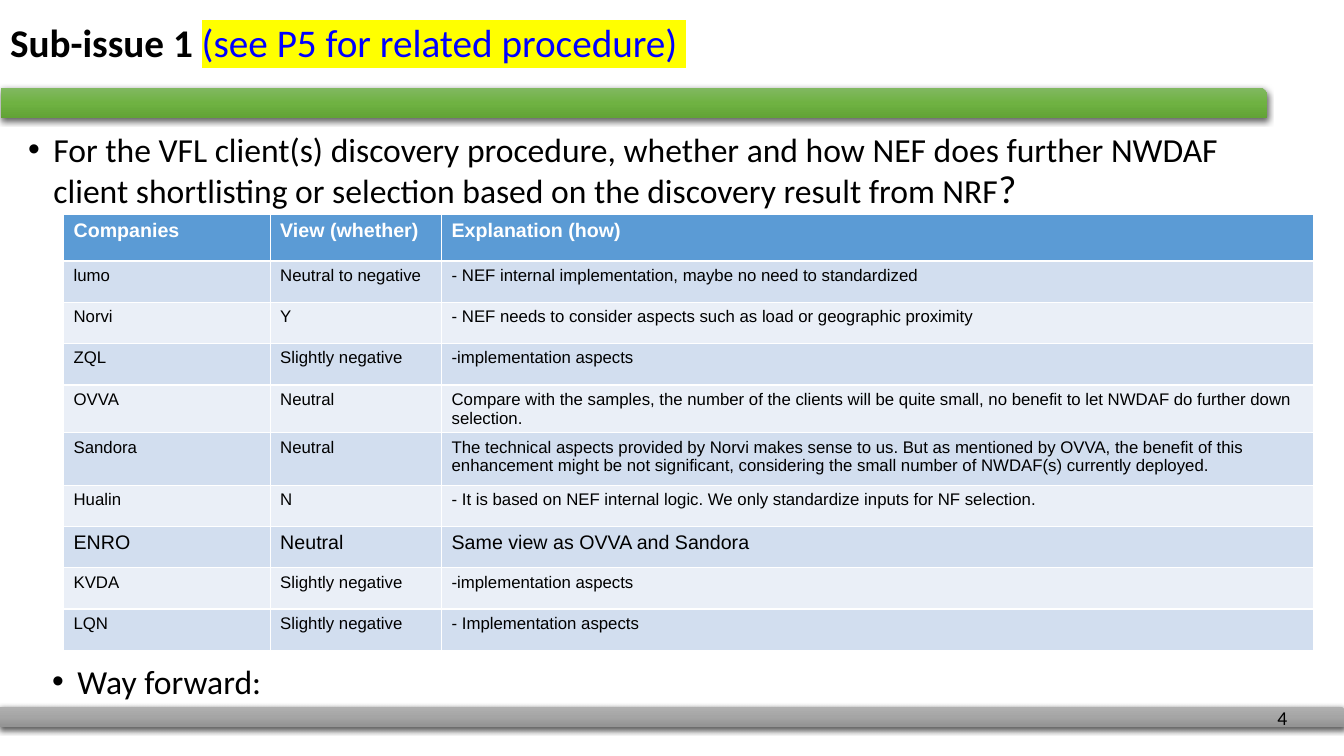
import copy
from dataclasses import dataclass

import lxml.etree
import pptx
import pptx.dml.color
import pptx.enum.dml
import pptx.enum.shapes
import pptx.enum.text
import pptx.oxml.ns
import pptx.slide
import pptx.text.text
import pptx.util

Inches = pptx.util.Inches


@dataclass(frozen=True)
class Theme:
    sans: str = "Calibri"
    grid: str = "Arial"
    black: str = "000000"
    white: str = "FFFFFF"
    blue: str = "0000FF"
    mark: str = "FFFF00"
    head: str = "5B9BD5"
    bands: tuple[str, str] = ("D2DEEF", "EAEFF7")
    green: tuple[str, ...] = ("81B861", "6FB242", "62A336")
    gray: tuple[str, ...] = ("AFAFAF", "A5A5A5", "939393")
    title: int = 28
    body: int = 24
    large: int = 14
    small: int = 12


@dataclass(frozen=True)
class Box:
    left: float
    top: float
    width: float
    height: float

    def place(self) -> tuple[int, ...]:
        return tuple(Inches(n) for n in (self.left, self.top, self.width, self.height))


@dataclass(frozen=True)
class Bar:
    box: Box
    shades: tuple[str, ...]


@dataclass(frozen=True)
class Row:
    name: str
    view: str
    why: str
    height: float = 0.41
    size: int = 12


THEME = Theme()
BARS = (
    Bar(Box(0, 7.01, 13.34, 0.2), THEME.gray),
    Bar(Box(0.01, 0.87, 12.56, 0.3), THEME.green),
)
WIDTHS = (2.05, 1.7, 8.65)
ROWS = (
    Row("Companies", "View (whether)", "Explanation (how)", 0.46, THEME.large),
    Row("lumo", "Neutral to negative",
        "- NEF internal implementation, maybe no need to standardized"),
    Row("Norvi", "Y",
        "- NEF needs to consider aspects such as load or geographic proximity"),
    Row("ZQL", "Slightly negative", "-implementation aspects"),
    Row("OVVA", "Neutral",
        "Compare with the samples, the number of the clients will be quite small, "
        "no benefit to let NWDAF do further down selection."),
    Row("Sandora", "Neutral",
        "The technical aspects provided by Norvi makes sense to us. But as mentioned "
        "by OVVA, the benefit of this enhancement might be not significant, "
        "considering the small number of NWDAF(s) currently deployed.", 0.52),
    Row("Hualin", "N",
        "- It is based on NEF internal logic. We only standardize inputs for NF selection."),
    Row("ENRO", "Neutral", "Same view as OVVA and Sandora", size=THEME.large),
    Row("KVDA", "Slightly negative", "-implementation aspects"),
    Row("LQN", "Slightly negative", "- Implementation aspects"),
)


def color(code: str) -> pptx.dml.color.RGBColor:
    return pptx.dml.color.RGBColor.from_string(code)


def style(font: pptx.text.text.Font, face: str, size: int, code: str,
          bold: bool = False) -> None:
    font.name, font.size, font.bold = face, pptx.util.Pt(size), bold
    font.color.rgb = color(code)


def add_node(parent: lxml.etree._Element, tag: str, **attrs: str) -> lxml.etree._Element:
    return lxml.etree.SubElement(parent, pptx.oxml.ns.qn(tag), attrs)


def add_bar(slide: pptx.slide.Slide, bar: Bar) -> None:
    """Draw a clipped bar with a three-stop gradient and a soft shadow."""
    kind = pptx.enum.shapes.MSO_SHAPE.SNIP_1_RECTANGLE
    shape = slide.shapes.add_shape(kind, *bar.box.place())
    shape.line.fill.background()
    shape.fill.gradient()
    shape.fill.gradient_angle = 270
    props = shape._element.spPr
    first = props.find(".//" + pptx.oxml.ns.qn("a:gs"))
    first.addnext(copy.deepcopy(first))
    stops = shape.fill.gradient_stops
    for step, (stop, shade) in enumerate(zip(stops, bar.shades)):
        stop.position = step / 2
        stop.color.rgb = color(shade)
    shade = add_node(add_node(props, "a:effectLst"), "a:outerShdw", blurRad="57150",
                     dist="19050", dir="5400000", algn="ctr", rotWithShape="0")
    tint = add_node(shade, "a:srgbClr", val=THEME.black)
    add_node(tint, "a:alpha", val="63000")


def add_title(slide: pptx.slide.Slide) -> None:
    title = slide.shapes.title
    title.left, title.top, title.width, title.height = Box(0, 0, 11.5, 0.89).place()
    frame = title.text_frame
    frame.auto_size = pptx.enum.text.MSO_AUTO_SIZE.NONE
    frame.vertical_anchor = pptx.enum.text.MSO_ANCHOR.MIDDLE
    para = frame.paragraphs[0]
    para.alignment = pptx.enum.text.PP_ALIGN.LEFT
    para.line_spacing = 0.9
    issue, hint = para.add_run(), para.add_run()
    issue.text, hint.text = "Sub-issue 1 ", "(see P5 for related procedure) "
    style(issue.font, THEME.sans, THEME.title, THEME.black, True)
    style(hint.font, THEME.sans, THEME.title, THEME.blue)
    fill = hint._r.rPr.find(pptx.oxml.ns.qn("a:solidFill"))
    glow = add_node(hint._r.rPr, "a:highlight")
    add_node(glow, "a:srgbClr", val=THEME.mark)
    fill.addnext(glow)


def set_bullet(para: pptx.text.text._Paragraph) -> None:
    para.line_spacing = 0.9
    para.space_before = pptx.util.Pt(10)
    props = para._p.get_or_add_pPr()
    props.set("marL", str(Inches(0.25)))
    props.set("indent", str(Inches(-0.25)))
    add_node(props, "a:buFont", typeface=THEME.grid)
    add_node(props, "a:buChar", char="•")


def add_body(slide: pptx.slide.Slide) -> None:
    body = slide.placeholders[1]
    body.left, body.top, body.width, body.height = Box(0.18, 1.27, 12.27, 5.58).place()
    body.text_frame.auto_size = pptx.enum.text.MSO_AUTO_SIZE.NONE
    para = body.text_frame.paragraphs[0]
    set_bullet(para)
    parts = (
        ("For the VFL client(s) discovery procedure, whether and how NEF does further "
         "NWDAF client shortlisting or selection based on the discovery result from NRF",
         THEME.body),
        ("?", THEME.title),
    )
    for text, size in parts:
        run = para.add_run()
        run.text = text
        style(run.font, THEME.sans, size, THEME.black)


def add_note(slide: pptx.slide.Slide, box: Box, text: str, size: int,
             wrap: bool = True) -> pptx.text.text._Paragraph:
    frame = slide.shapes.add_textbox(*box.place()).text_frame
    frame.word_wrap = wrap
    para = frame.paragraphs[0]
    para.text = text
    return para


def add_views(slide: pptx.slide.Slide) -> None:
    """Draw the table of views, one row for each company."""
    box = Box(0.63, 2.13, sum(WIDTHS), sum(row.height for row in ROWS))
    table = slide.shapes.add_table(len(ROWS), len(WIDTHS), *box.place()).table
    for col, width in zip(table.columns, WIDTHS):
        col.width = Inches(width)
    for at, row in enumerate(ROWS):
        table.rows[at].height = Inches(row.height)
        head = at == 0
        for cell, text in zip(table.rows[at].cells, (row.name, row.view, row.why)):
            cell.fill.solid()
            cell.fill.fore_color.rgb = color(THEME.head if head else THEME.bands[(at - 1) % 2])
            para = cell.text_frame.paragraphs[0]
            para.text = text
            style(para.font, THEME.grid, row.size, THEME.white if head else THEME.black, head)


def main() -> None:
    deck = pptx.Presentation()
    deck.slide_width, deck.slide_height = Inches(13.33), Inches(7.5)
    slide = deck.slides.add_slide(deck.slide_layouts[1])
    for bar in BARS:
        add_bar(slide, bar)
    add_title(slide)
    add_body(slide)
    add_views(slide)
    page = add_note(slide, Box(12.57, 6.95, 0.43, 0.34), "4", THEME.large, False)
    style(page.font, THEME.sans, THEME.large, THEME.black)
    way = add_note(slide, Box(0.42, 6.55, 12.1, 0.46), "Way forward:", THEME.body)
    set_bullet(way)
    style(way.font, THEME.sans, THEME.body, THEME.black)
    deck.save("out.pptx")


if __name__ == "__main__":
    main()
